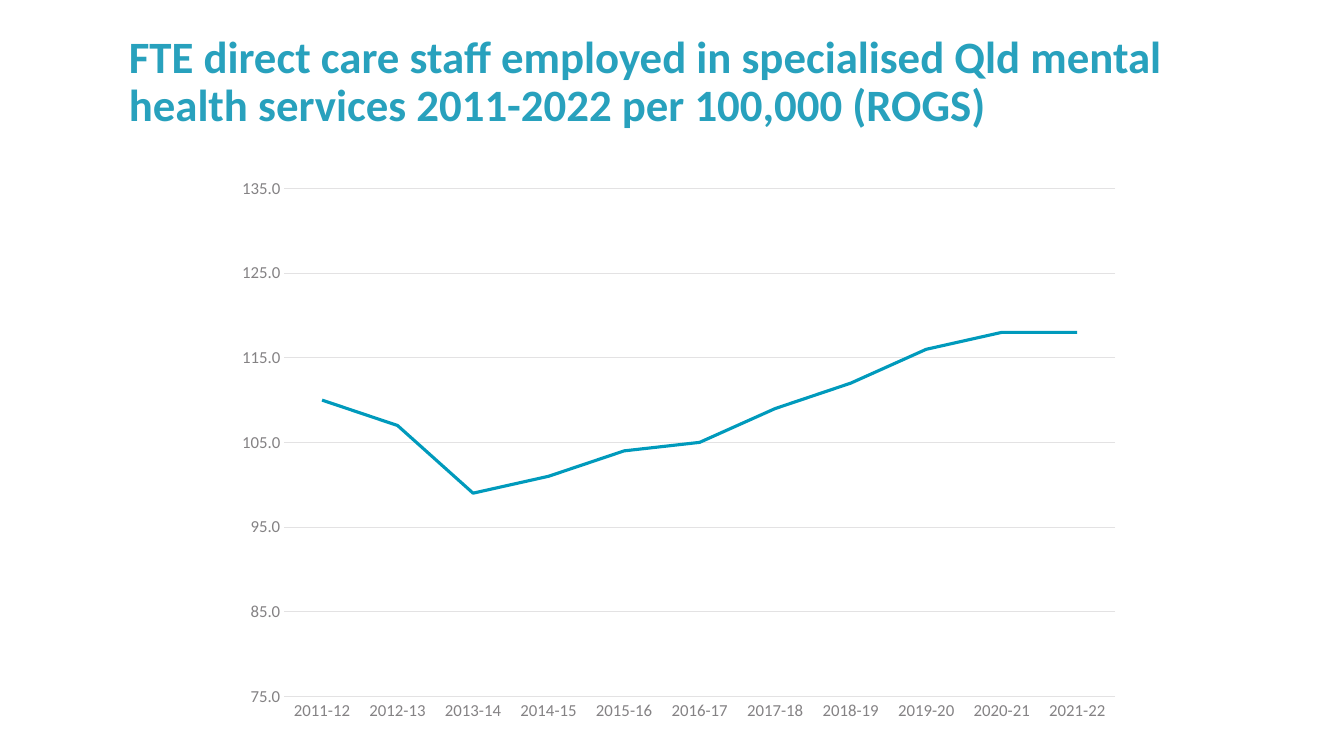
from dataclasses import dataclass

from lxml.etree import SubElement
from pptx import Presentation
from pptx.chart.data import CategoryChartData
from pptx.dml.color import RGBColor
from pptx.enum.chart import XL_CHART_TYPE as ChartType, XL_MARKER_STYLE as Marker
from pptx.enum.chart import XL_TICK_MARK as TickMark
from pptx.enum.text import MSO_ANCHOR as Anchor
from pptx.oxml.ns import qn
from pptx.util import Pt

EMU_PER_PX = 9144  # 100 px to the inch


@dataclass(frozen=True)
class Theme:
    font: str = "Calibri"
    heading: str = "28A1BD"
    staff_line: str = "009ABC"
    label: str = "848284"
    grid: str = "E3E2E3"
    heading_size: int = 32
    label_size: int = 12
    grid_width: float = 0.75
    staff_width: float = 2.25


def px(*lengths):
    return [length * EMU_PER_PX for length in lengths]


class SlideBuilder:
    def __init__(self, slide, theme):
        self.slide = slide
        self.theme = theme

    def style_font(self, font, size, color, bold=False):
        font.name, font.size, font.bold = self.theme.font, Pt(size), bold
        font.color.rgb = RGBColor.from_string(color)

    def style_line(self, line, color, width):
        line.color.rgb = RGBColor.from_string(color)
        line.width = Pt(width)

    def heading(self, text, *box):
        frame = self.slide.shapes.add_textbox(*px(*box)).text_frame
        frame.word_wrap = True
        frame.vertical_anchor = Anchor.MIDDLE
        frame.text = text
        paragraph = frame.paragraphs[0]
        paragraph.line_spacing = 0.9
        self.style_font(paragraph.runs[0].font, self.theme.heading_size,
                        self.theme.heading, bold=True)

    def line_chart(self, series_name, values_by_year, plot_box, *box):
        """Draw a line chart; plot_box is in px from the chart's corner."""
        theme = self.theme
        data = CategoryChartData(number_format="0")
        data.categories = list(values_by_year)
        data.add_series(series_name, list(values_by_year.values()))
        chart = self.slide.shapes.add_chart(ChartType.LINE, *px(*box), data).chart
        chart.has_legend = chart.has_title = False
        self.style_font(chart.font, theme.label_size, theme.label)
        width, height = box[2:]
        sides = (width, height, width, height)
        self.place_plot(chart, [part / side for part, side in zip(plot_box, sides)])

        plot = chart.plots[0]
        plot.vary_by_categories = False
        staff = plot.series[0]
        staff.smooth = False
        staff.marker.style = Marker.NONE
        self.style_line(staff.format.line, theme.staff_line, theme.staff_width)

        years, rate = chart.category_axis, chart.value_axis
        for axis in (years, rate):
            axis.major_tick_mark = axis.minor_tick_mark = TickMark.NONE
            self.style_font(axis.tick_labels.font, theme.label_size, theme.label)
        self.style_line(years.format.line, theme.grid, theme.grid_width)
        rate.format.line.fill.background()
        rate.minimum_scale, rate.maximum_scale, rate.major_unit = 75, 140, 10
        rate.tick_labels.number_format = "##0.0;\\-0.0;##0.0;@"
        rate.tick_labels.number_format_is_linked = False
        self.style_line(rate.major_gridlines.format.line, theme.grid, theme.grid_width)

    @staticmethod
    def place_plot(chart, fractions):
        """Fix the inner plot area as fractions (x, y, w, h) of the chart."""
        area = chart.element.find(".//" + qn("c:plotArea"))
        for automatic in area.findall(qn("c:layout")):
            area.remove(automatic)
        layout = SubElement(area, qn("c:layout"))
        area.insert(0, layout)
        manual = SubElement(layout, qn("c:manualLayout"))
        settings = [("layoutTarget", "inner"), ("xMode", "edge"), ("yMode", "edge")]
        for tag, value in settings + list(zip("xywh", fractions)):
            SubElement(manual, qn("c:" + tag)).set("val", str(value))


def main():
    staff_per_100k = {
        "2011-12": 110, "2012-13": 107, "2013-14": 99, "2014-15": 101,
        "2015-16": 104, "2016-17": 105, "2017-18": 109, "2018-19": 112,
        "2019-20": 116, "2020-21": 118, "2021-22": 118,
    }
    presentation = Presentation()
    presentation.slide_width, presentation.slide_height = px(1333, 750)
    slide = presentation.slides.add_slide(presentation.slide_layouts[6])
    builder = SlideBuilder(slide, Theme())
    builder.heading("FTE direct care staff employed in specialised Qld mental "
                    "health services 2011-2022 per 100,000 (ROGS)",
                    118, 10, 1150, 145)
    builder.line_chart("Series 1", staff_per_100k, (60, 11, 824, 546),
                       222, 134, 903, 593)
    presentation.save("out.pptx")


if __name__ == "__main__":
    main()
